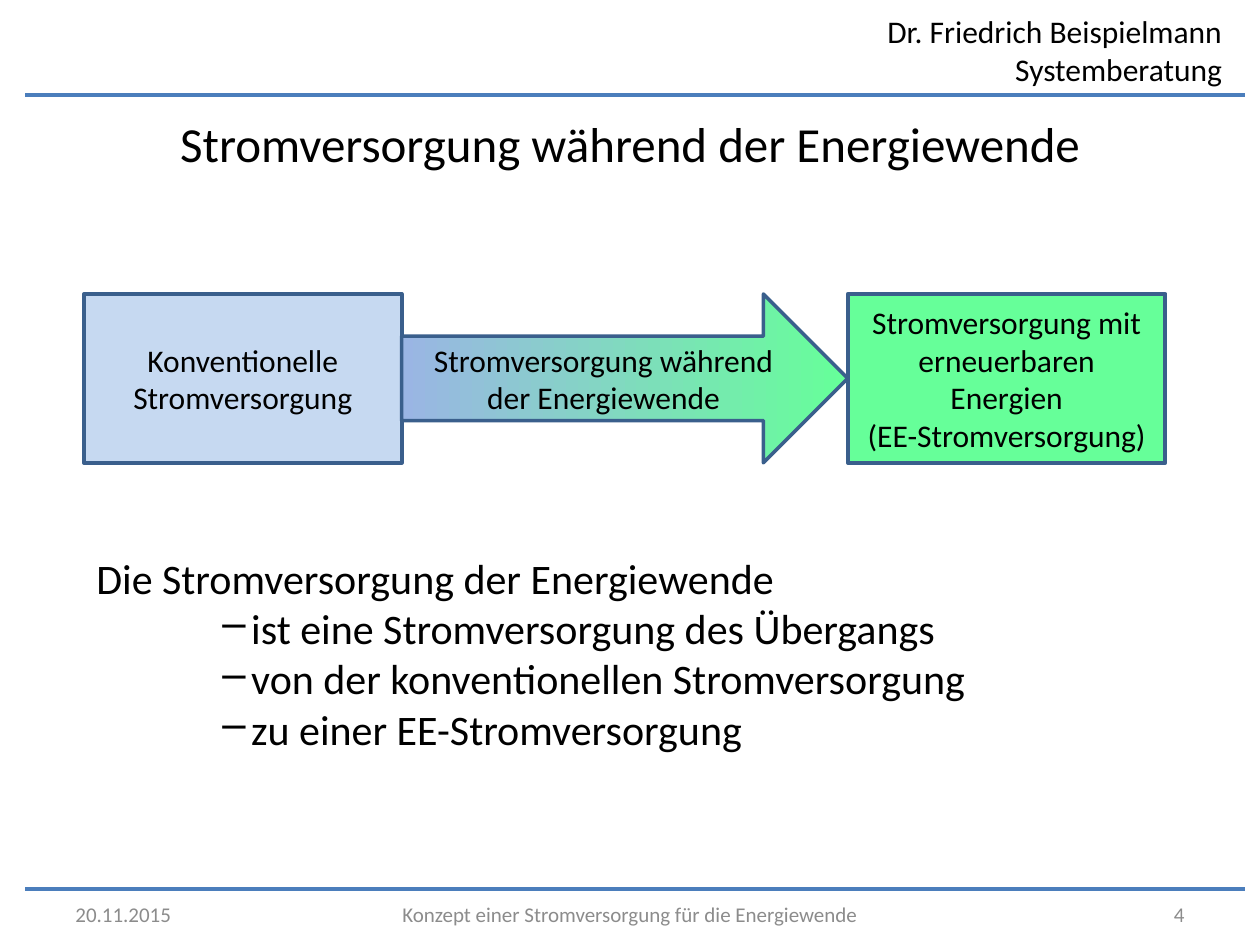
import pptx
import pptx.dml.color
import pptx.enum.shapes
import pptx.enum.text
import pptx.oxml
import pptx.oxml.ns
import pptx.util

Pt = pptx.util.Pt
RGBColor = pptx.dml.color.RGBColor
ALIGN = pptx.enum.text.PP_ALIGN
ANCHOR = pptx.enum.text.MSO_ANCHOR
SHAPE = pptx.enum.shapes.MSO_SHAPE

BLACK = RGBColor(0x00, 0x00, 0x00)
GREY = RGBColor(0x8C, 0x8C, 0x8C)
RULE_BLUE = RGBColor(0x4B, 0x7E, 0xBC)
OUTLINE_BLUE = RGBColor(0x3A, 0x5F, 0x8C)
PALE_BLUE = RGBColor(0xC6, 0xD9, 0xF1)
ARROW_BLUE = RGBColor(0x9A, 0xB5, 0xE4)
GREEN = RGBColor(0x66, 0xFF, 0x99)
FONT = "Calibri"


def write(frame, text, size, align, anchor=ANCHOR.TOP, color=BLACK):
    frame.word_wrap = True
    frame.auto_size = pptx.enum.text.MSO_AUTO_SIZE.NONE
    frame.vertical_anchor = anchor
    frame.text = text
    for paragraph in frame.paragraphs:
        paragraph.alignment = align
        for run in paragraph.runs:
            run.font.name = FONT
            run.font.size = Pt(size)
            run.font.color.rgb = color


def add_text(slide, box, *style):
    label = slide.shapes.add_textbox(*map(Pt, box))
    write(label.text_frame, *style)
    return label


def add_rule(slide, left, right, y):
    rule = slide.shapes.add_connector(
        pptx.enum.shapes.MSO_CONNECTOR.STRAIGHT, Pt(left), Pt(y), Pt(right), Pt(y))
    rule.line.color.rgb = RULE_BLUE
    rule.line.width = Pt(2.25)
    properties = rule.element.find(pptx.oxml.ns.qn("p:spPr"))
    pptx.oxml.ns.qn("a:effectLst")
    properties.append(pptx.oxml.parse_xml(
        f'<a:effectLst {pptx.oxml.ns.nsdecls("a")}/>'))


def add_header(slide, left, top, width, height):
    add_text(slide, (left, top, width, height),
             "Dr. Friedrich Beispielmann\vSystemberatung", 18, ALIGN.RIGHT)


def add_title(slide, left, top, width, height):
    title = slide.shapes.title
    title.left, title.top, title.width, title.height = map(
        Pt, (left, top, width, height))
    write(title.text_frame, "Stromversorgung während der Energiewende",
          28, ALIGN.CENTER)


def add_step(slide, kind, box, text, line_width):
    step = slide.shapes.add_shape(kind, *map(Pt, box))
    step.shadow.inherit = False
    step.line.color.rgb = OUTLINE_BLUE
    step.line.width = Pt(line_width)
    write(step.text_frame, text, 18, ALIGN.CENTER, ANCHOR.MIDDLE)
    return step


def add_transition(slide, left, top, width, height):
    state_width = 181.5
    arrow_width = width - 2 * state_width
    states = [
        (left, "Konventionelle Stromversorgung", PALE_BLUE),
        (left + width - state_width,
         "Stromversorgung mit erneuerbaren Energien\v(EE-Stromversorgung)", GREEN),
    ]
    for x, text, color in states:
        state = add_step(slide, SHAPE.RECTANGLE,
                         (x, top, state_width, height), text, 2.25)
        state.fill.solid()
        state.fill.fore_color.rgb = color

    arrow = add_step(slide, SHAPE.RIGHT_ARROW,
                     (left + state_width, top, arrow_width, height),
                     "Stromversorgung während der Energiewende", 2)
    arrow.fill.gradient()
    arrow.fill.gradient_angle = 0
    for stop, color in zip(arrow.fill.gradient_stops, (ARROW_BLUE, GREEN)):
        stop.color.rgb = color


def add_explanation(slide, left, top, width, height):
    lines = [
        "Die Stromversorgung der Energiewende",
        "ist eine Stromversorgung des Übergangs",
        "von der konventionellen Stromversorgung",
        "zu einer EE-Stromversorgung",
    ]
    explanation = add_text(slide, (left, top, width, height),
                           "\n".join(lines), 24, ALIGN.LEFT)
    for point in explanation.text_frame.paragraphs[1:]:
        properties = point._p.get_or_add_pPr()
        properties.set("marL", str(Pt(88.5)))
        properties.set("indent", str(Pt(-16.5)))
        properties.append(pptx.oxml.parse_xml(
            f'<a:buChar {pptx.oxml.ns.nsdecls("a")} char="–"/>'))


def add_footer(slide, left, top, width, height):
    side_width, middle_width = 148, 329
    parts = [
        (left, side_width, "20.11.2015", ALIGN.LEFT),
        (left + (width - middle_width) / 2, middle_width,
         "Konzept einer Stromversorgung für die Energiewende", ALIGN.CENTER),
        (left + width - side_width, side_width, "4", ALIGN.RIGHT),
    ]
    for x, part_width, text, align in parts:
        add_text(slide, (x, top, part_width, height),
                 text, 12, align, ANCHOR.MIDDLE, GREY)


def main():
    presentation = pptx.Presentation()
    presentation.slide_width = Pt(720)
    presentation.slide_height = Pt(540)
    slide = presentation.slides.add_slide(presentation.slide_layouts[5])

    add_header(slide, 484.5, 3.5, 221, 51)
    for y in (54.5, 508):
        add_rule(slide, 14.5, 711.5, y)
    add_footer(slide, 36, 508, 648, 28.5)
    add_title(slide, 36, 61, 648, 44)
    add_transition(slide, 48, 168, 618, 96.5)
    add_explanation(slide, 48, 312, 618, 124)

    presentation.save("out.pptx")


if __name__ == "__main__":
    main()
